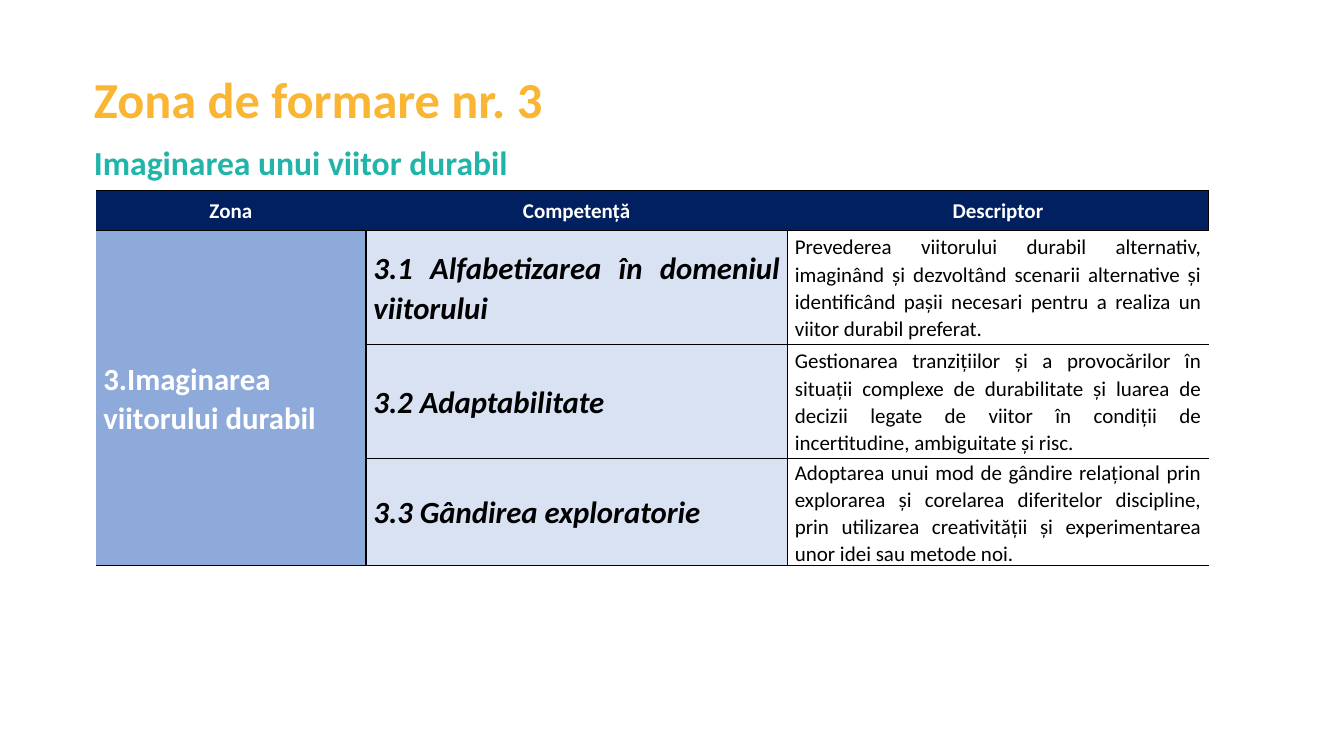
from lxml import etree
from pptx import Presentation
from pptx import util as u
from pptx.dml.color import RGBColor
from pptx.enum import text
from pptx.oxml.ns import qn

# Content
TITLE = "Zona de formare nr. 3"
SUBTITLE = "Imaginarea unui viitor durabil"
HEADINGS = ["Zona", "Competență", "Descriptor"]
ZONE = "3.Imaginarea viitorului durabil"
COMPETENCES = [
    ("3.1 Alfabetizarea în domeniul viitorului",
     "Prevederea viitorului durabil alternativ, imaginând și dezvoltând scenarii alternative "
     "și identificând pașii necesari pentru a realiza un viitor durabil preferat."),
    ("3.2 Adaptabilitate",
     "Gestionarea tranzițiilor și a provocărilor în situații complexe de durabilitate și "
     "luarea de decizii legate de viitor în condiții de incertitudine, ambiguitate și risc."),
    ("3.3 Gândirea exploratorie",
     "Adoptarea unui mod de gândire relațional prin explorarea și corelarea diferitelor "
     "discipline, prin utilizarea creativității și experimentarea unor idei sau metode noi."),
]

# Theme: font formats, fills and borders by part
THEME = {
    "font": "Calibri",
    "line": "000000",
    "no_grid": "{2D5ABB26-0587-4C30-8999-92F81FD0307C}",
    "title": {"size": 36, "bold": True, "color": "FAB632"},
    "subtitle": {"size": 24, "bold": True, "color": "21B4A9"},
    "heading": {"size": 15, "bold": True, "color": "FFFFFF", "fill": "002060", "sides": "TB"},
    "last_heading": {"size": 15, "bold": True, "color": "FFFFFF", "fill": "002060", "sides": "RTB"},
    "zone": {"size": 22, "bold": True, "color": "FFFFFF", "fill": "8EAADB", "sides": "RTB"},
    "competence": {"size": 22, "bold": True, "italic": True, "color": "000000",
                   "fill": "D9E2F3", "sides": "LRTB"},
    "descriptor": {"size": 15, "bold": False, "color": "000000", "sides": "LTB"},
}

# Layout, in points
TABLE_LEFT, TABLE_TOP = 68.4, 136.1
COLUMNS = [193, 301, 301]
HEADING_ROW = 28.8
BODY_ROWS = [81.4, 81.4, 76]

prs = Presentation()
prs.slide_width, prs.slide_height = u.Pt(960), u.Pt(540)
slide = prs.slides.add_slide(prs.slide_layouts[6])


def write(frame, words, part):
    paragraph = frame.paragraphs[0]
    run = paragraph.add_run()
    run.text = words
    style = THEME[part]
    values = {"name": THEME["font"], "size": u.Pt(style["size"]),
              "bold": style["bold"], "italic": style.get("italic", False)}
    for key, value in values.items():
        setattr(run.font, key, value)
    run.font.color.rgb = RGBColor.from_string(style["color"])
    return paragraph


def add_line(words, part, left, top, width, height):
    box = slide.shapes.add_textbox(*map(u.Pt, (left, top, width, height)))
    box.text_frame.word_wrap = True
    write(box.text_frame, words, part)


def add_border(cell, side, drawn):
    line = etree.SubElement(cell._tc.get_or_add_tcPr(), qn(f"a:ln{side}"), w=str(u.Pt(1)))
    if drawn:
        fill = etree.SubElement(line, qn("a:solidFill"))
        etree.SubElement(fill, qn("a:srgbClr"), val=THEME["line"])
    else:
        etree.SubElement(line, qn("a:noFill"))


def format_cell(cell, words, part, align):
    style = THEME[part]
    values = {"margin_left": u.Pt(5.4), "margin_right": u.Pt(5.4), "margin_top": 0,
              "margin_bottom": 0, "vertical_anchor": text.MSO_ANCHOR.MIDDLE}
    for key, value in values.items():
        setattr(cell, key, value)
    for side in "LRTB":
        add_border(cell, side, side in style["sides"])
    if "fill" in style:
        cell.fill.solid()
        cell.fill.fore_color.rgb = RGBColor.from_string(style["fill"])
    else:
        cell.fill.background()
    if words:
        paragraph = write(cell.text_frame, words, part)
        paragraph.alignment, paragraph.line_spacing = align, 1.06


def add_grid(top, heights, rows, parts, align, merge_first=False):
    frame = slide.shapes.add_table(len(rows), len(COLUMNS), u.Pt(TABLE_LEFT), u.Pt(top),
                                   u.Pt(sum(COLUMNS)), u.Pt(sum(heights)))
    table = frame.table
    table.first_row = table.horz_banding = False
    table._tbl.tblPr.find(qn("a:tableStyleId")).text = THEME["no_grid"]
    for column, width in zip(table.columns, COLUMNS):
        column.width = u.Pt(width)
    for row, height in zip(table.rows, heights):
        row.height = u.Pt(height)
    if merge_first:
        table.cell(0, 0).merge(table.cell(len(rows) - 1, 0))
    for r, row in enumerate(rows):
        for c, (words, part) in enumerate(zip(row, parts)):
            format_cell(table.cell(r, c), words, part, align)


# Title and subtitle
add_line(SUBTITLE, "subtitle", 60, 98, 605.5, 36)
add_line(TITLE, "title", 60, 45.4, 646.5, 51)

# Heading row, then the zone with its competences
add_grid(TABLE_TOP, [HEADING_ROW], [HEADINGS], ["heading", "heading", "last_heading"],
         text.PP_ALIGN.CENTER)
body = [(ZONE if i == 0 else "", *pair) for i, pair in enumerate(COMPETENCES)]
add_grid(TABLE_TOP + HEADING_ROW, BODY_ROWS, body, ["zone", "competence", "descriptor"],
         text.PP_ALIGN.JUSTIFY, merge_first=True)

prs.save("out.pptx")
